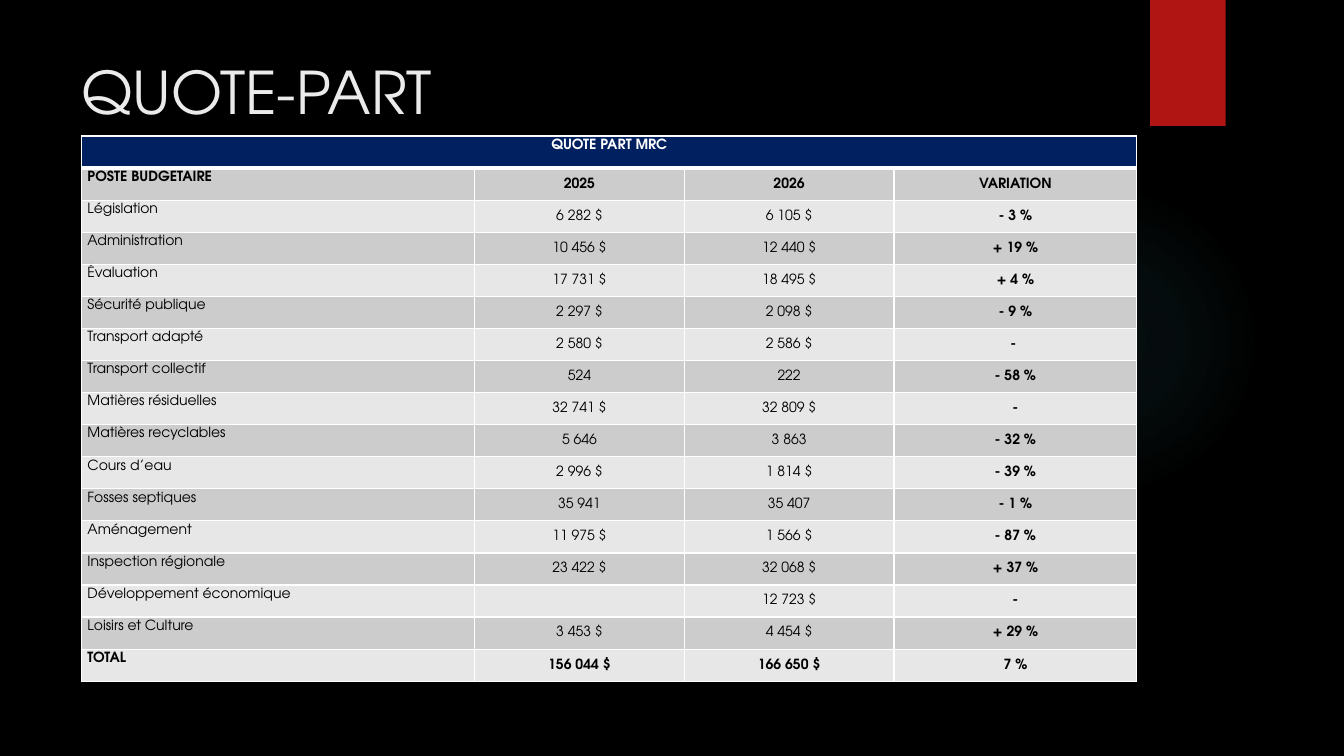
from lxml import etree
from pptx import Presentation
from pptx.dml import color
from pptx.enum import shapes, text
from pptx.oxml import ns
from pptx.util import Pt

FONT = "TeX Gyre Adventor"
COLORS = {
    "background": "000000", "title": "EBEBEB", "ribbon": "B01513",
    "glow": "50B9C1", "header": "002060", "dark_band": "CCCCCC",
    "light_band": "E7E7E7", "ink": "000000", "white": "FFFFFF",
}
COLUMN_WIDTHS = [280.8, 149.8, 149.8, 173.5]
HEADINGS = ("POSTE BUDGÉTAIRE", "2025", "2026", "VARIATION")
BUDGET = [
    ("Législation", "6 282 $", "6 105 $", "- 3 %"),
    ("Administration", "10 456 $", "12 440 $", "+ 19 %"),
    ("Évaluation", "17 731 $", "18 495 $", "+ 4 %"),
    ("Sécurité publique", "2 297 $", "2 098 $", "- 9 %"),
    ("Transport adapté", "2 580 $", "2 586 $", "- "),
    ("Transport collectif", "524", "222", "- 58 %"),
    ("Matières résiduelles", "32 741 $", "32 809 $", "-"),
    ("Matières recyclables", "5 646", "3 863", "- 32 %"),
    ("Cours d’eau", "2 996 $", "1 814 $", "- 39 %"),
    ("Fosses septiques", "35 941", "35 407", "- 1 %"),
    ("Aménagement", "11 975 $", "1 566 $", "- 87 %"),
    ("Inspection régionale", "23 422 $", "32 068 $", "+ 37 %"),
    ("Développement économique", "", "12 723 $", "-"),
    ("Loisirs et Culture", "3 453 $", "4 454 $", "+ 29 %"),
]
TOTAL = ("TOTAL", "156 044 $", "166 650 $", "7 %")


def rgb(name):
    return color.RGBColor.from_string(COLORS[name])


def add_run(paragraph, words, size, ink, bold=False):
    run = paragraph.add_run()
    run.text = words
    run.font.name = FONT
    run.font.size = Pt(size)
    run.font.bold = bold
    run.font.color.rgb = rgb(ink)


def add_plain_shape(slide, preset, left, top, width, height):
    shape = slide.shapes.add_shape(preset, Pt(left), Pt(top), Pt(width), Pt(height))
    shape.shadow.inherit = False
    shape.line.fill.background()
    return shape


def add_glow(slide, left, top, size):
    glow = add_plain_shape(slide, shapes.MSO_SHAPE.OVAL, left, top, size, size)
    stops = "".join(
        f'<a:gs pos="{place * 1000}"><a:srgbClr val="{COLORS["glow"]}">'
        f'<a:alpha val="{opacity * 1000}"/></a:srgbClr></a:gs>'
        for place, opacity in ((0, 7), (36, 6), (69, 0)))
    gradient = etree.fromstring(
        f'<a:gradFill {ns.nsdecls("a")}><a:gsLst>{stops}</a:gsLst><a:path path="circle">'
        '<a:fillToRect l="50000" t="50000" r="50000" b="50000"/></a:path></a:gradFill>')
    glow.element.spPr.find(ns.qn("a:prstGeom")).addnext(gradient)


def add_ribbon(slide, left, top, width, height):
    ribbon = add_plain_shape(slide, shapes.MSO_SHAPE.RECTANGLE, left, top, width, height)
    ribbon.fill.solid()
    ribbon.fill.fore_color.rgb = rgb("ribbon")


def set_title(slide, left, top, width, height):
    title = slide.shapes.title
    title.left, title.top, title.width, title.height = map(Pt, (left, top, width, height))
    frame = title.text_frame
    frame.word_wrap = True
    frame.auto_size = text.MSO_AUTO_SIZE.NONE
    frame.vertical_anchor = text.MSO_ANCHOR.TOP
    frame.paragraphs[0].alignment = text.PP_ALIGN.LEFT
    add_run(frame.paragraphs[0], "QUOTE-PART", 42, "title")


def set_borders(cell, top=1, bottom=1):
    properties = cell._tc.get_or_add_tcPr()
    sides = {"lnL": 1, "lnR": 1, "lnT": top, "lnB": bottom}
    for place, (side, width) in enumerate(sides.items()):
        properties.insert(place, etree.fromstring(
            f'<a:{side} {ns.nsdecls("a")} w="{Pt(width)}"><a:solidFill>'
            f'<a:srgbClr val="{COLORS["white"]}"/></a:solidFill></a:{side}>'))


def fill_cell(cell, words, band, ink="ink", bold=False, centered=False, middle=False):
    cell.margin_left = cell.margin_right = Pt(4.3)
    cell.margin_top = cell.margin_bottom = Pt(2.2)
    cell.fill.solid()
    cell.fill.fore_color.rgb = rgb(band)
    if middle:
        cell.vertical_anchor = text.MSO_ANCHOR.MIDDLE
    paragraph = cell.text_frame.paragraphs[0]
    if centered:
        paragraph.alignment = text.PP_ALIGN.CENTER
    if words:
        add_run(paragraph, words, 10, ink, bold)
    else:  # keeps an empty cell from stretching its row
        etree.SubElement(paragraph._p, ns.qn("a:endParaRPr"), sz="1000")


def add_budget_table(slide, left, top, width, height):
    lines = [HEADINGS, *BUDGET, TOTAL]
    row_count = len(lines) + 1
    table = slide.shapes.add_table(row_count, len(HEADINGS), Pt(left), Pt(top),
                                   Pt(width), Pt(height)).table
    for column, share in zip(table.columns, COLUMN_WIDTHS):
        column.width = Pt(width * share / sum(COLUMN_WIDTHS))
    for row in table.rows:
        row.height = Pt(height / row_count)

    # Banner across all columns
    banner = table.cell(0, 0)
    banner.merge(table.cell(0, len(HEADINGS) - 1))
    fill_cell(banner, "QUOTE PART MRC", "header", "white", bold=True, centered=True)
    for cell in table.rows[0].cells:
        set_borders(cell, bottom=3)

    # Headings, budget items and total in alternating bands
    for r, line in enumerate(lines, start=1):
        band = "dark_band" if r % 2 else "light_band"
        for c, words in enumerate(line):
            bold = line in (HEADINGS, TOTAL) or c == len(line) - 1
            fill_cell(table.cell(r, c), words, band, bold=bold,
                      centered=c > 0, middle=c > 0)
            set_borders(table.cell(r, c), top=3 if r == 1 else 1)


def build_quota_slide(deck):
    slide = deck.slides.add_slide(deck.slide_layouts[5])
    slide.background.fill.solid()
    slide.background.fill.fore_color.rgb = rgb("background")
    add_glow(slide, 677.5, 131.8, 221.8)
    add_ribbon(slide, 821.5, 0, 54, 90)
    set_title(slide, 51.1, 36, 740.9, 110.2)
    add_budget_table(slide, 58.2, 97.2, 753.9, 389.8)


def main():
    deck = Presentation()
    deck.slide_width, deck.slide_height = Pt(960), Pt(540)
    build_quota_slide(deck)
    deck.save("out.pptx")


if __name__ == "__main__":
    main()
